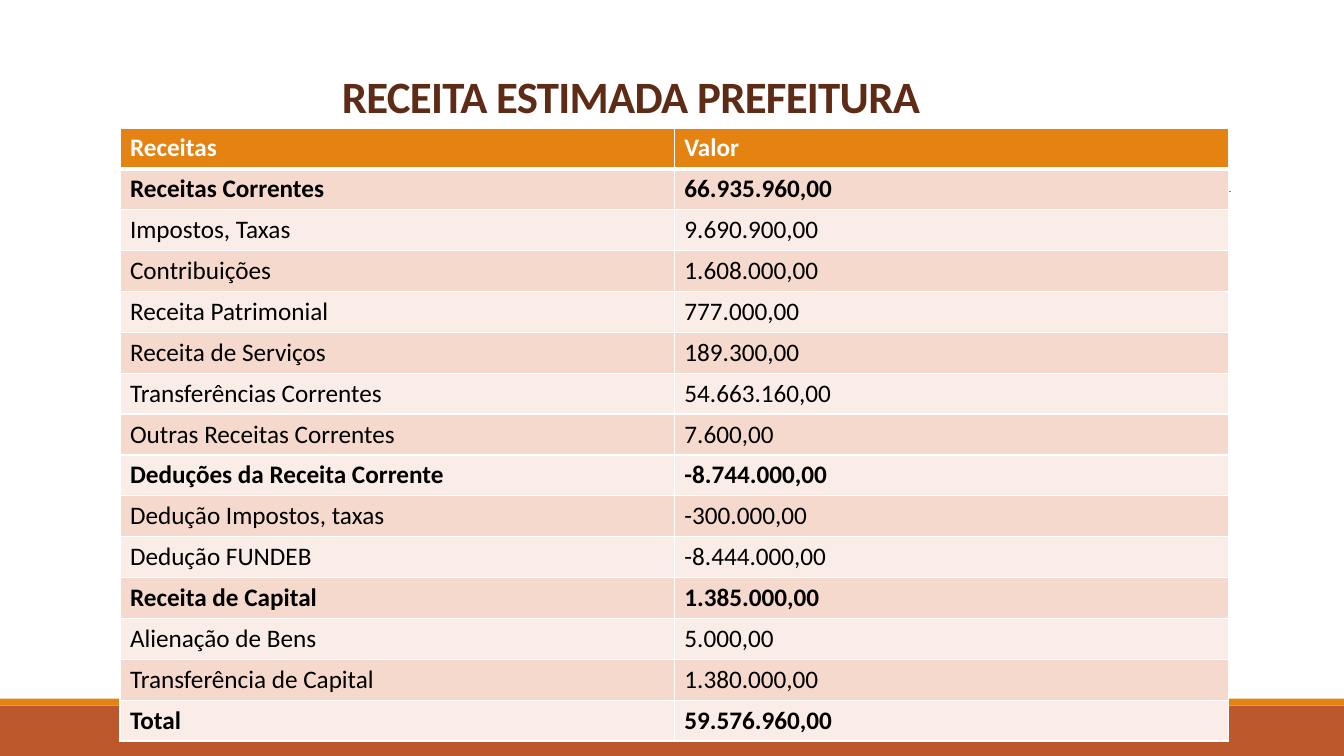
"""Build the slide with the estimated revenue table of the city hall."""
from dataclasses import dataclass

from lxml import etree
from pptx import Presentation
from pptx.dml.color import RGBColor
from pptx.enum.shapes import MSO_CONNECTOR, MSO_SHAPE
from pptx.enum.text import MSO_ANCHOR, MSO_AUTO_SIZE, PP_ALIGN
from pptx.oxml.ns import qn
from pptx.util import Pt

STRAIGHT = MSO_CONNECTOR.STRAIGHT
RECTANGLE = MSO_SHAPE.RECTANGLE
BOTTOM = MSO_ANCHOR.BOTTOM
NO_AUTOFIT = MSO_AUTO_SIZE.NONE
LEFT, CENTER = PP_ALIGN.LEFT, PP_ALIGN.CENTER

FONT = "Calibri"
COLORS = {
    "orange": "E48312",
    "rust": "BD582C",
    "brown": "5E2C16",
    "gray": "808080",
    "white": "FFFFFF",
    "black": "000000",
    "dark_band": "F5D9CC",
    "light_band": "FAEDE7",
}
SLIDE_WIDTH, SLIDE_HEIGHT = 960, 540
TABLE_LEFT, TABLE_TOP = 85.7, 91.4
COLUMN_WIDTH, ROW_HEIGHT = 396, 29.2


@dataclass(frozen=True)
class Band:
    """A full-width strip at the foot of the slide."""
    top: float
    height: float
    color: str


@dataclass(frozen=True)
class Revenue:
    """One table row: a label, its amount and its emphasis."""
    label: str
    amount: str
    bold: bool = False


BANDS = [Band(504, 36, "rust"), Band(499, 5, "orange")]
REVENUES = [
    Revenue("Receitas", "Valor", True),
    Revenue("Receitas Correntes", "66.935.960,00", True),
    Revenue("Impostos, Taxas", "9.690.900,00"),
    Revenue("Contribuições", "1.608.000,00"),
    Revenue("Receita Patrimonial", "777.000,00"),
    Revenue("Receita de Serviços", "189.300,00"),
    Revenue("Transferências Correntes", "54.663.160,00"),
    Revenue("Outras Receitas Correntes", "7.600,00"),
    Revenue("Deduções da Receita Corrente", "-8.744.000,00", True),
    Revenue("Dedução Impostos, taxas", "-300.000,00"),
    Revenue("Dedução FUNDEB", "-8.444.000,00"),
    Revenue("Receita de Capital", "1.385.000,00", True),
    Revenue("Alienação de Bens", "5.000,00"),
    Revenue("Transferência de Capital", "1.380.000,00"),
    Revenue("Total", "59.576.960,00", True),
]


def rgb(name: str) -> RGBColor:
    """Return the named palette colour."""
    return RGBColor.from_string(COLORS[name])


def write_text(frame, text: str, *, size: float = 18, color: str = "black",
               bold: bool = False, align=LEFT, line_spacing: float = 1,
               tracking: float = 0) -> None:
    """Write one formatted paragraph into a text frame."""
    para = frame.paragraphs[0]
    para.alignment = align
    para.line_spacing = line_spacing
    span = para.add_run()
    span.text = text
    span.font.name = FONT
    span.font.size = Pt(size)
    span.font.bold = bold
    span.font.color.rgb = rgb(color)
    if tracking:
        span.font._element.set("spc", str(round(tracking * 100)))


def draw_band(page, band: Band) -> None:
    """Draw one strip across the slide."""
    strip = page.shapes.add_shape(
        RECTANGLE, 0, Pt(band.top), Pt(SLIDE_WIDTH), Pt(band.height))
    strip.shadow.inherit = False
    strip.fill.solid()
    strip.fill.fore_color.rgb = rgb(band.color)
    strip.line.fill.background()


def draw_rule(page) -> None:
    """Draw the thin rule that runs behind the table."""
    rule = page.shapes.add_connector(
        STRAIGHT, Pt(94.3), Pt(136.8), Pt(879.1), Pt(136.8))
    rule.line.color.rgb = rgb("gray")
    rule.line.width = Pt(0.5)
    etree.SubElement(rule._element.spPr, qn("a:effectLst"))


def write_title(page) -> None:
    """Place and fill the title placeholder."""
    title = page.shapes.title
    title.left, title.top = Pt(112.3), Pt(33.8)
    title.width, title.height = Pt(676.8), Pt(57.6)
    frame = title.text_frame
    frame.word_wrap = True
    frame.auto_size = NO_AUTOFIT
    frame.vertical_anchor = BOTTOM
    write_text(frame, "RECEITA ESTIMADA PREFEITURA", size=32, color="brown",
               bold=True, align=CENTER, line_spacing=0.85, tracking=-0.5)


def set_borders(cell, *, top: float = 1, bottom: float = 1) -> None:
    """Give a cell white borders of the given widths."""
    properties = cell._tc.get_or_add_tcPr()
    widths = {"a:lnL": 1, "a:lnR": 1, "a:lnT": top, "a:lnB": bottom}
    for index, (tag, width) in enumerate(widths.items()):
        line = etree.Element(qn(tag), w=str(Pt(width)))
        fill = etree.SubElement(line, qn("a:solidFill"))
        etree.SubElement(fill, qn("a:srgbClr"), val=COLORS["white"])
        properties.insert(index, line)


def draw_table(page) -> None:
    """Draw the revenue table with its header and banded rows."""
    table = page.shapes.add_table(
        len(REVENUES), 2, Pt(TABLE_LEFT), Pt(TABLE_TOP),
        Pt(2 * COLUMN_WIDTH), Pt(len(REVENUES) * ROW_HEIGHT)).table
    for column in table.columns:
        column.width = Pt(COLUMN_WIDTH)
    for index, revenue in enumerate(REVENUES):
        table.rows[index].height = Pt(ROW_HEIGHT)
        header = index == 0
        band = "dark_band" if index % 2 else "light_band"
        for column, text in enumerate((revenue.label, revenue.amount)):
            cell = table.cell(index, column)
            cell.fill.solid()
            cell.fill.fore_color.rgb = rgb("orange" if header else band)
            set_borders(cell, top=3 if index == 1 else 1,
                        bottom=3 if header else 1)
            write_text(cell.text_frame, text, bold=revenue.bold,
                       color="white" if header else "black")


def main() -> None:
    """Build and save the deck."""
    deck = Presentation()
    deck.slide_width, deck.slide_height = Pt(SLIDE_WIDTH), Pt(SLIDE_HEIGHT)
    page = deck.slides.add_slide(deck.slide_layouts.get_by_name("Title Only"))
    for band in BANDS:
        draw_band(page, band)
    draw_rule(page)
    write_title(page)
    draw_table(page)
    deck.save("out.pptx")


if __name__ == "__main__":
    main()
